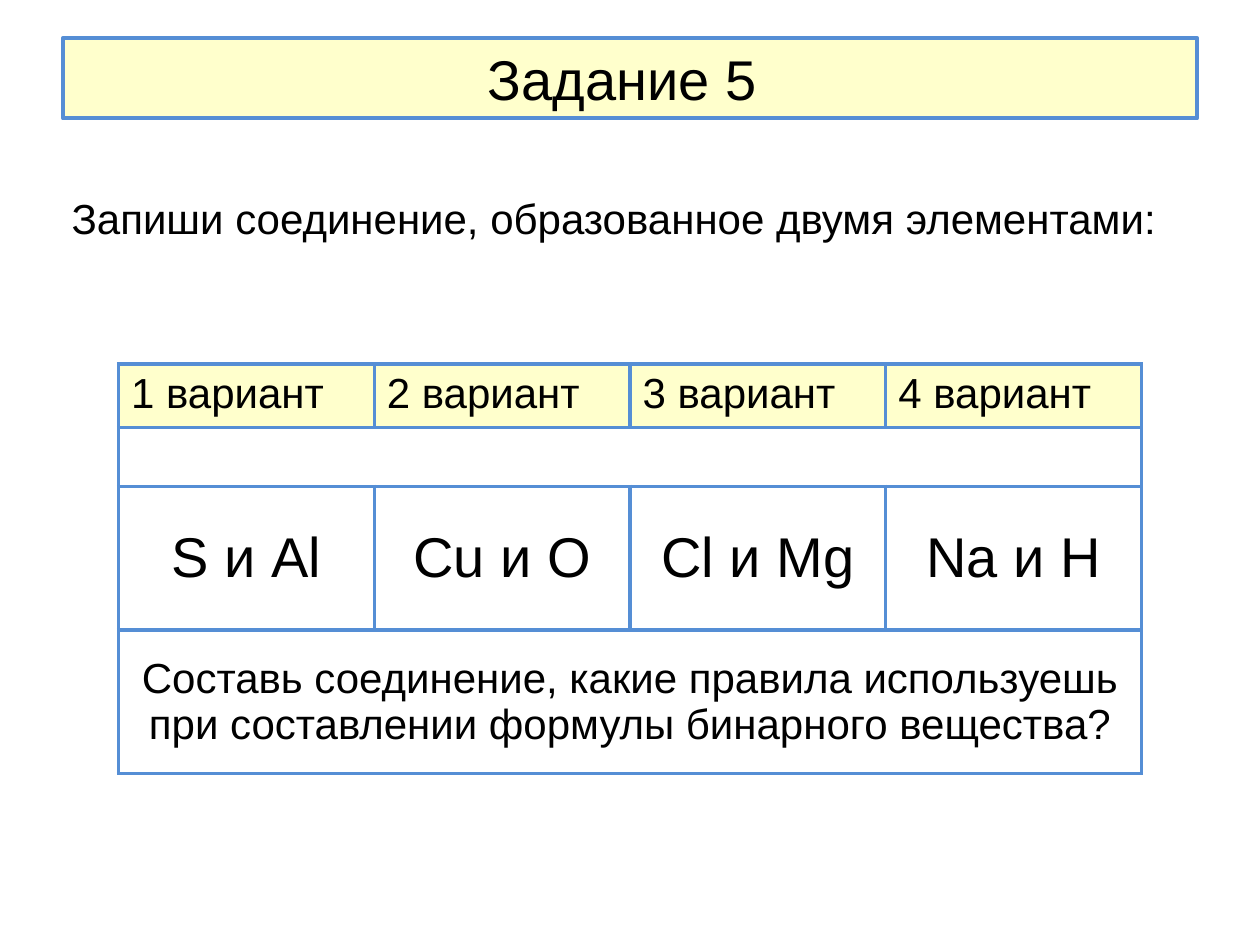
from lxml import etree
from pptx import Presentation
from pptx.dml.color import RGBColor
from pptx.enum.text import MSO_ANCHOR, PP_ALIGN
from pptx.oxml.ns import qn
from pptx.util import Inches, Pt

# Content
TITLE = "Задание 5 "
TASK = "Запиши соединение, образованное двумя элементами:"
VARIANTS = ["1 вариант", "2 вариант", "3 вариант", "4 вариант"]
ELEMENT_PAIRS = ["S и Al", "Cu и O", "Cl и Mg", "Na и H"]
QUESTION = ("Составь соединение, какие правила используешь "
            "при составлении формулы бинарного вещества?")

# Style
FONT = "Arial"
BLACK = RGBColor(0x00, 0x00, 0x00)
CREAM = RGBColor(0xFF, 0xFF, 0xCC)
BLUE = RGBColor(0x55, 0x8E, 0xD5)
LINE_WIDTH = Pt(2.25)
LEFT, CENTER = PP_ALIGN.LEFT, PP_ALIGN.CENTER
TOP, MIDDLE = MSO_ANCHOR.TOP, MSO_ANCHOR.MIDDLE
TITLE_ONLY = 5

# Table rows: height, texts, text size, alignment, anchor, fill
ROWS = [
    (0.47, VARIANTS, 24, LEFT, TOP, CREAM),
    (0.47, [""], 18, LEFT, TOP, None),
    (1.14, ELEMENT_PAIRS, 32, CENTER, MIDDLE, None),
    (1.14, [QUESTION], 24, CENTER, MIDDLE, None),
]
COLUMN_WIDTH = 2.03


def write(text_frame, text, size, alignment, anchor):
    text_frame.text = text
    text_frame.word_wrap = True
    text_frame.vertical_anchor = anchor
    paragraph = text_frame.paragraphs[0]
    paragraph.alignment = alignment
    for font in [paragraph.font] + [run.font for run in paragraph.runs]:
        font.name = FONT
        font.size = Pt(size)
        font.color.rgb = BLACK


def add_borders(cell):
    properties = cell._tc.get_or_add_tcPr()
    for index, side in enumerate(("a:lnL", "a:lnR", "a:lnT", "a:lnB")):
        line = etree.Element(qn(side), w=str(LINE_WIDTH))
        fill = etree.SubElement(line, qn("a:solidFill"))
        etree.SubElement(fill, qn("a:srgbClr"), val=str(BLUE))
        properties.insert(index, line)


presentation = Presentation()
presentation.slide_width = Inches(10)
presentation.slide_height = Inches(7.5)
slide = presentation.slides.add_slide(presentation.slide_layouts[TITLE_ONLY])

# Title
title = slide.shapes.title
title.left, title.top = Inches(0.5), Inches(0.3)
title.width, title.height = Inches(9), Inches(0.64)
title.fill.solid()
title.fill.fore_color.rgb = CREAM
title.line.color.rgb = BLUE
title.line.width = LINE_WIDTH
write(title.text_frame, TITLE, 32, CENTER, MIDDLE)

# Task
task = slide.shapes.add_textbox(Inches(0.47), Inches(1.48), Inches(9), Inches(1.06))
write(task.text_frame, TASK, 24, LEFT, TOP)

# Table of variants
column_count = len(VARIANTS)
table = slide.shapes.add_table(
    len(ROWS), column_count, Inches(0.94), Inches(2.89),
    Inches(COLUMN_WIDTH * column_count), Inches(sum(row[0] for row in ROWS))).table
table.first_row = table.horz_banding = False
for column in table.columns:
    column.width = Inches(COLUMN_WIDTH)

for row, (height, texts, size, alignment, anchor, color) in enumerate(ROWS):
    table.rows[row].height = Inches(height)
    if len(texts) == 1:
        table.cell(row, 0).merge(table.cell(row, column_count - 1))
    for column in range(column_count):
        cell = table.cell(row, column)
        if color is None:
            cell.fill.background()
        else:
            cell.fill.solid()
            cell.fill.fore_color.rgb = color
        add_borders(cell)
        if column < len(texts):
            write(cell.text_frame, texts[column], size, alignment, TOP)
            cell.vertical_anchor = anchor

presentation.save("out.pptx")
